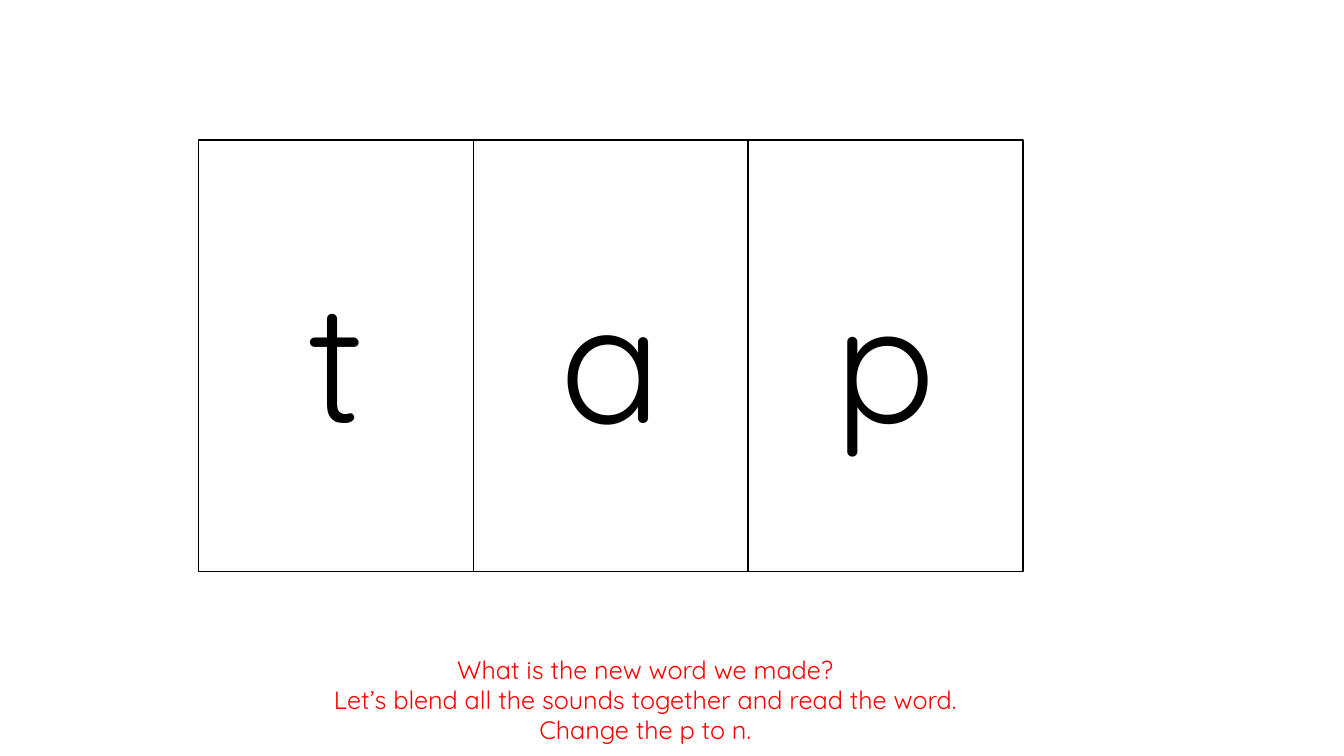
"""Build a phonics slide with three letter boxes and a prompt below."""
import pptx
import pptx.util
import pptx.dml.color
import pptx.enum.shapes
import pptx.enum.text

Inches = pptx.util.Inches
Pt = pptx.util.Pt
BLACK = pptx.dml.color.RGBColor(0x00, 0x00, 0x00)
WHITE = pptx.dml.color.RGBColor(0xFF, 0xFF, 0xFF)
RED = pptx.dml.color.RGBColor(0xFF, 0x00, 0x00)
FONT = "Quicksand"
BOX_WIDTH = 2.725


def format_paragraph(paragraph, size, color):
    paragraph.alignment = pptx.enum.text.PP_ALIGN.CENTER
    paragraph.font.name = FONT
    paragraph.font.size = Pt(size)
    paragraph.font.color.rgb = color


presentation = pptx.Presentation()
presentation.slide_width = Inches(13.33)
presentation.slide_height = Inches(7.5)
slide = presentation.slides.add_slide(presentation.slide_layouts[6])

for index, letter in enumerate("tap"):
    letter_box = slide.shapes.add_shape(
        pptx.enum.shapes.MSO_SHAPE.RECTANGLE,
        Inches(1.97 + index * BOX_WIDTH), Inches(1.39), Inches(BOX_WIDTH), Inches(4.28))
    letter_box.shadow.inherit = False
    letter_box.fill.solid()
    letter_box.fill.fore_color.rgb = WHITE
    letter_box.line.color.rgb = BLACK
    letter_box.line.width = Pt(1)
    letter_box.text_frame.vertical_anchor = pptx.enum.text.MSO_ANCHOR.MIDDLE
    letter_box.text_frame.text = letter
    format_paragraph(letter_box.text_frame.paragraphs[0], 120, BLACK)

prompt = slide.shapes.add_textbox(Inches(1.06), Inches(6.44), Inches(10.68), Inches(1.01))
prompt.text_frame.word_wrap = True
prompt.text_frame.auto_size = pptx.enum.text.MSO_AUTO_SIZE.SHAPE_TO_FIT_TEXT
prompt.text_frame.text = "\n".join([
    "What is the new word we made?",
    "Let’s blend all the sounds together and read the word.",
    "Change the p to n.",
])
for paragraph in prompt.text_frame.paragraphs:
    format_paragraph(paragraph, 18, RED)

presentation.save("out.pptx")
